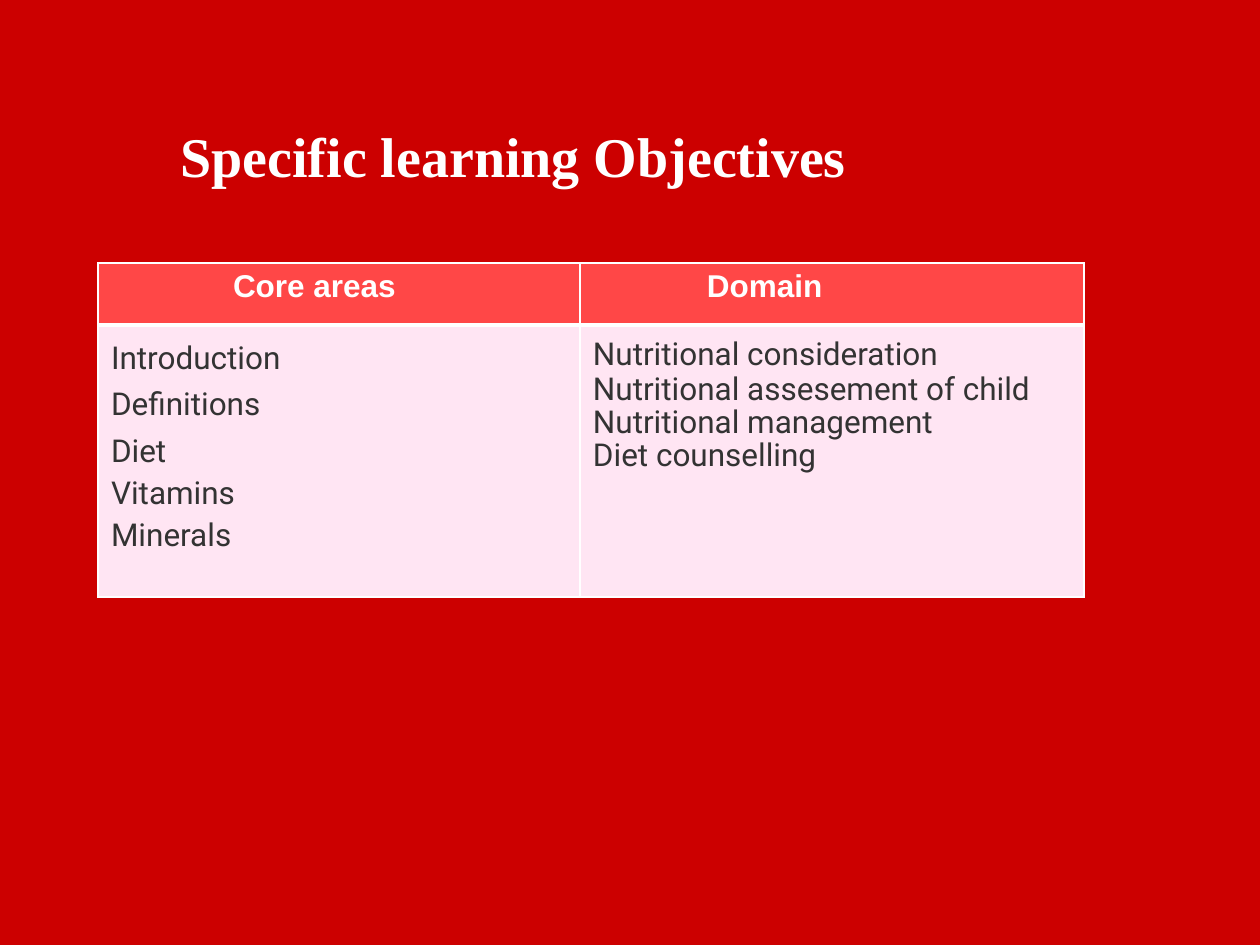
"""Build the learning objectives slide."""
import pptx
import pptx.dml.color
import pptx.enum.text
import pptx.oxml
import pptx.oxml.ns
import pptx.util

SCALE = 914400 / 126
WHITE = "FFFFFF"
INSET = 13
HEADS = [("Core areas", 135), ("Domain", 127)]
LISTS = [
    [("Introduction", 1.25), ("Definitions", 1.25), ("Diet", 1.25),
     ("Vitamins", 1.15), ("Minerals", 1.15)],
    [("Nutritional consideration", 1.15),
     ("Nutritional assesement of child", 0.9),
     ("Nutritional management", 0.9), ("Diet counselling", 0.9)],
]


def px(count):
    return pptx.util.Emu(round(count * SCALE))


def color(code):
    return pptx.dml.color.RGBColor.from_string(code)


def style(para, face, size, code, bold=False):
    font = para.font
    font.name, font.size, font.bold = face, pptx.util.Pt(size), bold
    font.color.rgb = color(code)


def paint(fill, code):
    fill.solid()
    fill.fore_color.rgb = color(code)


def border(cell, base):
    props = cell._tc.get_or_add_tcPr()
    sides = [("L", 1), ("R", 1), ("T", 1), ("B", base)]
    for spot, (side, width) in enumerate(sides):
        line = pptx.oxml.parse_xml(
            f'<a:ln{side} {pptx.oxml.ns.nsdecls("a")} w="{width * 12700}">'
            f'<a:solidFill><a:srgbClr val="{WHITE}"/></a:solidFill>'
            f'</a:ln{side}>')
        props.insert(spot, line)


def add_title(slide, text):
    box = slide.shapes.add_textbox(px(168), px(38), px(1076), px(157))
    frame = box.text_frame
    frame.word_wrap = True
    frame.vertical_anchor = pptx.enum.text.MSO_ANCHOR.BOTTOM
    para = frame.paragraphs[0]
    para.text = text
    style(para, "Times New Roman", 32, WHITE, True)


def fill_head(cell, text, inset):
    paint(cell.fill, "FF4747")
    border(cell, 3)
    cell.margin_left = px(inset)
    para = cell.text_frame.paragraphs[0]
    para.text = text
    style(para, "Arial", 18, WHITE, True)


def fill_list(cell, items):
    paint(cell.fill, "FFE5F3")
    border(cell, 1)
    cell.margin_left = px(INSET)
    frame = cell.text_frame
    for spot, (text, space) in enumerate(items):
        para = frame.add_paragraph() if spot else frame.paragraphs[0]
        para.text = text
        para.line_spacing = space
        style(para, "Roboto", 18, "333333")


def add_goals(slide):
    frame = slide.shapes.add_table(2, 2, px(98), px(263), px(986), px(334))
    table = frame.table
    for col, width in zip(table.columns, [482, 504]):
        col.width = px(width)
    for row, height in zip(table.rows, [62, 272]):
        row.height = px(height)
    for spot, (head, items) in enumerate(zip(HEADS, LISTS)):
        fill_head(table.cell(0, spot), *head)
        fill_list(table.cell(1, spot), items)


def main():
    deck = pptx.Presentation()
    deck.slide_width, deck.slide_height = px(1260), px(945)
    slide = deck.slides.add_slide(deck.slide_layouts[6])
    paint(slide.background.fill, "CC0000")
    add_title(slide, "Specific learning Objectives")
    add_goals(slide)
    deck.save("out.pptx")


if __name__ == "__main__":
    main()
